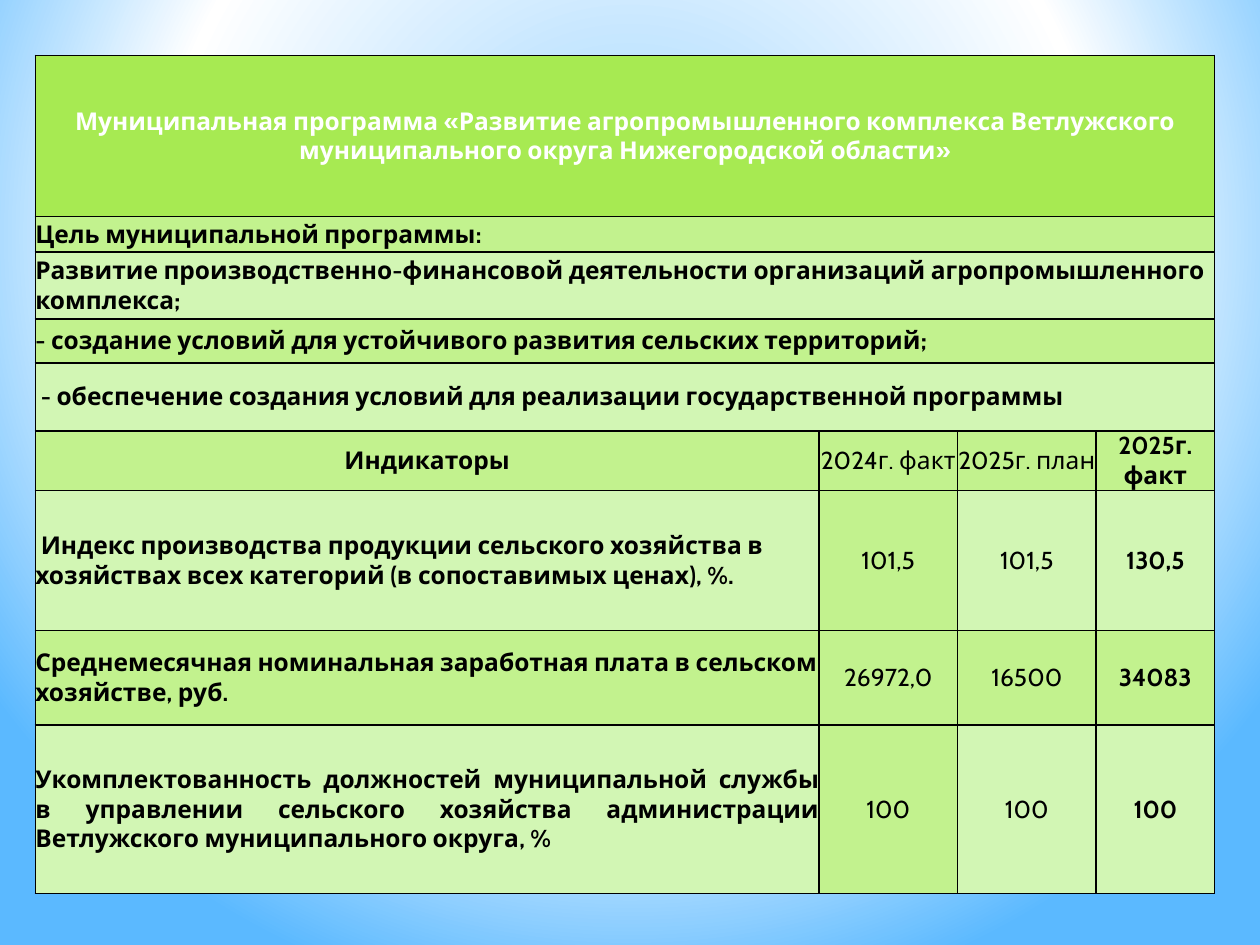
from lxml import etree
from pptx import Presentation
from pptx.dml.color import RGBColor
from pptx.enum.text import MSO_ANCHOR, PP_ALIGN
from pptx.oxml import parse_xml
from pptx.oxml.ns import nsdecls, qn
from pptx.util import Inches, Pt

GREEN, BAND, LIGHT = "A7EA52", "C2F28E", "D2F6B4"
BLACK, WHITE = "000000", "FFFFFF"
LEFT, CENTER, JUSTIFY = PP_ALIGN.LEFT, PP_ALIGN.CENTER, PP_ALIGN.JUSTIFY

COL_WIDTHS = [6.22, 1.1, 1.1, 0.94]
ROW_HEIGHTS = [1.28, 0.28, 0.53, 0.35, 0.54, 0.47, 1.11, 0.75, 1.34]

TITLE = ("Муниципальная программа «Развитие агропромышленного комплекса "
         "Ветлужского муниципального округа Нижегородской области»")
GOALS = [
    "Цель муниципальной программы:",
    "Развитие производственно-финансовой деятельности организаций "
    "агропромышленного комплекса;",
    "- создание условий для устойчивого развития сельских территорий;",
    " - обеспечение создания условий для реализации государственной программы",
]
# Label, label alignment, values, fill of each column
INDICATORS = [
    ("Индикаторы", CENTER, ["2024г. факт", "2025г. план", "2025г. факт"],
     [BAND] * 4),
    (" Индекс производства продукции сельского хозяйства в хозяйствах всех "
     "категорий (в сопоставимых ценах), %.", LEFT,
     ["101,5", "101,5", "130,5"], [LIGHT, BAND, LIGHT, LIGHT]),
    ("Среднемесячная номинальная заработная плата в сельском хозяйстве, руб.",
     LEFT, ["26972,0", "16500", "34083"], [BAND] * 4),
    ("Укомплектованность должностей муниципальной службы в управлении "
     "сельского хозяйства администрации Ветлужского муниципального округа, %",
     JUSTIFY, ["100", "100", "100"], [LIGHT, BAND, LIGHT, LIGHT]),
]


def rgb(color):
    return RGBColor.from_string(color)


def set_background(slide):
    """Radial gradient from light blue through white to blue."""
    slide.background.fill.solid()
    bg_pr = slide.background._cSld.bg.bgPr
    stops = "".join(
        f'<a:gs pos="{pos * 1000}"><a:srgbClr val="{color}"/></a:gs>'
        for pos, color in [(0, "9ED5FF"), (60, WHITE), (100, "5BB9FF")])
    grad = parse_xml(
        f'<a:gradFill {nsdecls("a")} rotWithShape="1"><a:gsLst>{stops}</a:gsLst>'
        '<a:path path="circle"><a:fillToRect l="20000" t="10000" r="20000" '
        'b="60000"/></a:path></a:gradFill>')
    bg_pr.replace(bg_pr.find(qn("a:solidFill")), grad)


def set_borders(cell):
    tc_pr = cell._tc.get_or_add_tcPr()
    for side in ("lnL", "lnR", "lnT", "lnB"):
        ln = etree.SubElement(tc_pr, qn(f"a:{side}"), w=str(Pt(1)))
        fill = etree.SubElement(ln, qn("a:solidFill"))
        etree.SubElement(fill, qn("a:srgbClr"), val=BLACK)


def set_text(cell, text, align=LEFT, bold=True, color=BLACK):
    p = cell.text_frame.paragraphs[0]
    p.alignment = align
    r = p.add_run()
    r.text = text
    font = r.font
    font.name, font.size, font.bold = "Cabin", Pt(14), bold
    font.color.rgb = rgb(color)


def set_fill(cell, color):
    cell.fill.solid()
    cell.fill.fore_color.rgb = rgb(color)


def add_grid(slide):
    table = slide.shapes.add_table(
        len(ROW_HEIGHTS), len(COL_WIDTHS), Inches(0.28), Inches(0.44),
        Inches(sum(COL_WIDTHS)), Inches(sum(ROW_HEIGHTS))).table
    for col, width in zip(table.columns, COL_WIDTHS):
        col.width = Inches(width)
    for row, height in zip(table.rows, ROW_HEIGHTS):
        row.height = Inches(height)
    for cell in table.iter_cells():
        cell.margin_left = cell.margin_right = 0
        cell.margin_top = cell.margin_bottom = 0
        cell.vertical_anchor = MSO_ANCHOR.MIDDLE
        set_borders(cell)
    return table


def fill_wide_row(table, row, text, fill, **fmt):
    """One text across all columns."""
    last = len(COL_WIDTHS) - 1
    table.cell(row, 0).merge(table.cell(row, last))
    for col in range(last + 1):
        set_fill(table.cell(row, col), fill)
    set_text(table.cell(row, 0), text, **fmt)


def fill_indicator_row(table, row, label, align, values, fills):
    for col, (text, fill) in enumerate(zip([label] + values, fills)):
        cell = table.cell(row, col)
        set_fill(cell, fill)
        set_text(cell, text, align=CENTER if col else align,
                 bold=col in (0, 3))


def main():
    prs = Presentation()
    prs.slide_width, prs.slide_height = Inches(10), Inches(7.5)
    slide = prs.slides.add_slide(prs.slide_layouts[6])
    set_background(slide)

    table = add_grid(slide)
    fill_wide_row(table, 0, TITLE, GREEN, align=CENTER, color=WHITE)
    for row, goal in enumerate(GOALS, 1):
        fill_wide_row(table, row, goal, BAND if row % 2 else LIGHT)
    for row, indicator in enumerate(INDICATORS, 1 + len(GOALS)):
        fill_indicator_row(table, row, *indicator)

    prs.save("out.pptx")


if __name__ == "__main__":
    main()
